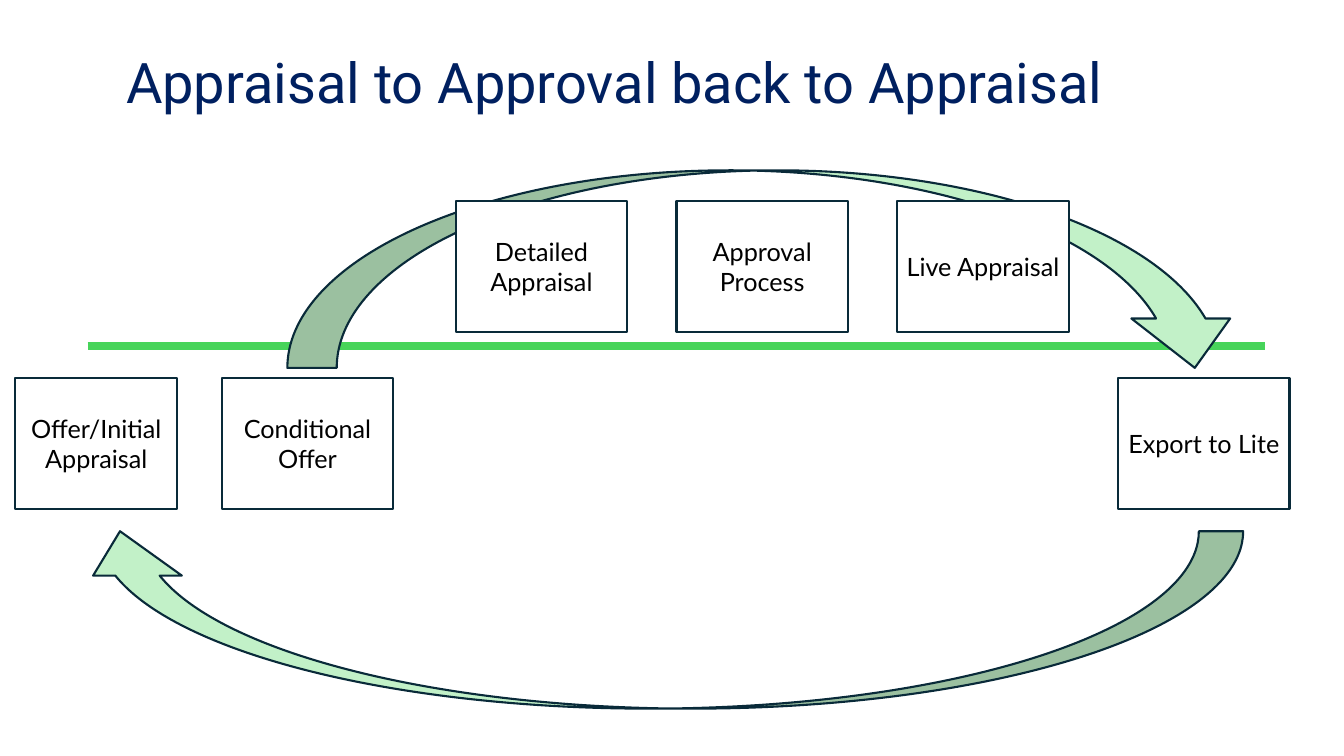
from dataclasses import dataclass

from lxml import etree
from pptx import Presentation
from pptx.dml.color import RGBColor
from pptx.enum.shapes import MSO_CONNECTOR, MSO_SHAPE
from pptx.enum.text import MSO_ANCHOR, MSO_AUTO_SIZE, PP_ALIGN
from pptx.oxml import parse_xml
from pptx.oxml.ns import nsdecls, qn
from pptx.shapes.autoshape import Shape
from pptx.slide import Slide
from pptx.util import Inches, Pt

RECTANGLE = MSO_SHAPE.RECTANGLE
CURVED_ARROW = MSO_SHAPE.CURVED_DOWN_ARROW
STRAIGHT = MSO_CONNECTOR.STRAIGHT
LEFT, CENTER = PP_ALIGN.LEFT, PP_ALIGN.CENTER
MIDDLE, BOTTOM = MSO_ANCHOR.MIDDLE, MSO_ANCHOR.BOTTOM

WHITE = RGBColor(0xFF, 0xFF, 0xFF)
BLACK = RGBColor(0x00, 0x00, 0x00)
NAVY = RGBColor(0x00, 0x20, 0x60)
OUTLINE = RGBColor(0x09, 0x2A, 0x39)
GREEN = RGBColor(0x47, 0xD4, 0x5A)
PALE_GREEN = RGBColor(0xC2, 0xF1, 0xC8)

TITLE_FORMAT = {"size": Pt(40), "bold": False}
STEP_FORMAT = {"size": Pt(18), "name": "Lato"}
STEP_INSETS = {"margin_left": Inches(0.08), "margin_right": Inches(0.08)}
STEP_HEIGHT = 1.3
UPPER_ROW, LOWER_ROW = 1.99, 3.75
UPPER_LEFT, UPPER_PITCH = 4.52, 2.19

TITLE_SHADOW = (
    f'<a:effectLst {nsdecls("a")}>'
    '<a:outerShdw blurRad="38100" dist="38100" dir="2700000" algn="tl">'
    '<a:srgbClr val="000000"><a:alpha val="43000"/></a:srgbClr>'
    "</a:outerShdw></a:effectLst>"
)


@dataclass(frozen=True)
class Step:
    text: str
    left: float
    top: float
    width: float = 1.7


@dataclass(frozen=True)
class Arrow:
    left: float
    top: float
    width: float
    height: float
    rotation: float = 0


STEPS = [
    Step("Offer/Initial Appraisal", 0.15, LOWER_ROW, 1.61),
    Step("Conditional Offer", 2.2, LOWER_ROW),
    *(
        Step(text, UPPER_LEFT + index * UPPER_PITCH, UPPER_ROW)
        for index, text in enumerate(
            ["Detailed Appraisal", "Approval Process", "Live Appraisal"]
        )
    ),
    Step("Export to Lite", 11.09, LOWER_ROW),
]
FORWARD_ARROW = Arrow(2.85, 1.69, 9.49, 1.96)
RETURN_ARROW = Arrow(0.75, 5.27, 11.58, 1.76, 180)


def apply_format(target: object, values: dict) -> None:
    for name, value in values.items():
        setattr(target, name, value)


def paint(shape: Shape, fill: RGBColor) -> None:
    shape.shadow.inherit = False
    shape.fill.solid()
    shape.fill.fore_color.rgb = fill
    shape.line.color.rgb = OUTLINE
    shape.line.width = Pt(1.5)


def add_title(slide: Slide, text: str) -> None:
    title = slide.shapes.title
    title.left, title.top = Inches(1.15), Inches(0.48)
    title.width, title.height = Inches(11.03), Inches(0.72)
    frame = title.text_frame
    frame.auto_size = MSO_AUTO_SIZE.NONE
    frame.vertical_anchor = BOTTOM
    paragraph = frame.paragraphs[0]
    paragraph.alignment = LEFT
    paragraph.line_spacing = 0.9
    run = paragraph.add_run()
    run.text = text
    apply_format(run.font, TITLE_FORMAT)
    run.font.color.rgb = NAVY
    # The shadow must stand between the colour and the typeface
    run.font._element.append(parse_xml(TITLE_SHADOW))
    run.font.name = "Roboto"


def add_divider(slide: Slide) -> None:
    divider = slide.shapes.add_connector(
        STRAIGHT, Inches(0.87), Inches(3.43), Inches(12.55), Inches(3.43)
    )
    divider.line.color.rgb = GREEN
    divider.line.width = Pt(5.5)
    etree.SubElement(divider._element.spPr, qn("a:effectLst"))


def add_arrow(slide: Slide, arrow: Arrow) -> None:
    shape = slide.shapes.add_shape(
        CURVED_ARROW, Inches(arrow.left), Inches(arrow.top),
        Inches(arrow.width), Inches(arrow.height),
    )
    shape.rotation = arrow.rotation
    paint(shape, PALE_GREEN)


def add_step(slide: Slide, step: Step) -> None:
    shape = slide.shapes.add_shape(
        RECTANGLE, Inches(step.left), Inches(step.top),
        Inches(step.width), Inches(STEP_HEIGHT),
    )
    paint(shape, WHITE)
    frame = shape.text_frame
    frame.word_wrap = True
    frame.vertical_anchor = MIDDLE
    apply_format(frame, STEP_INSETS)
    paragraph = frame.paragraphs[0]
    paragraph.alignment = CENTER
    run = paragraph.add_run()
    run.text = step.text
    apply_format(run.font, STEP_FORMAT)
    run.font.color.rgb = BLACK


def main() -> None:
    presentation = Presentation()
    presentation.slide_width = Inches(13.33)
    presentation.slide_height = Inches(7.5)
    slide = presentation.slides.add_slide(presentation.slide_layouts[5])

    # Title and the line between the two rows
    add_title(slide, "Appraisal to Approval back to Appraisal")
    add_divider(slide)

    # The process cycle: the forward arrow runs behind the steps
    add_arrow(slide, FORWARD_ARROW)
    for step in STEPS:
        add_step(slide, step)
    add_arrow(slide, RETURN_ARROW)

    presentation.save("out.pptx")


if __name__ == "__main__":
    main()
